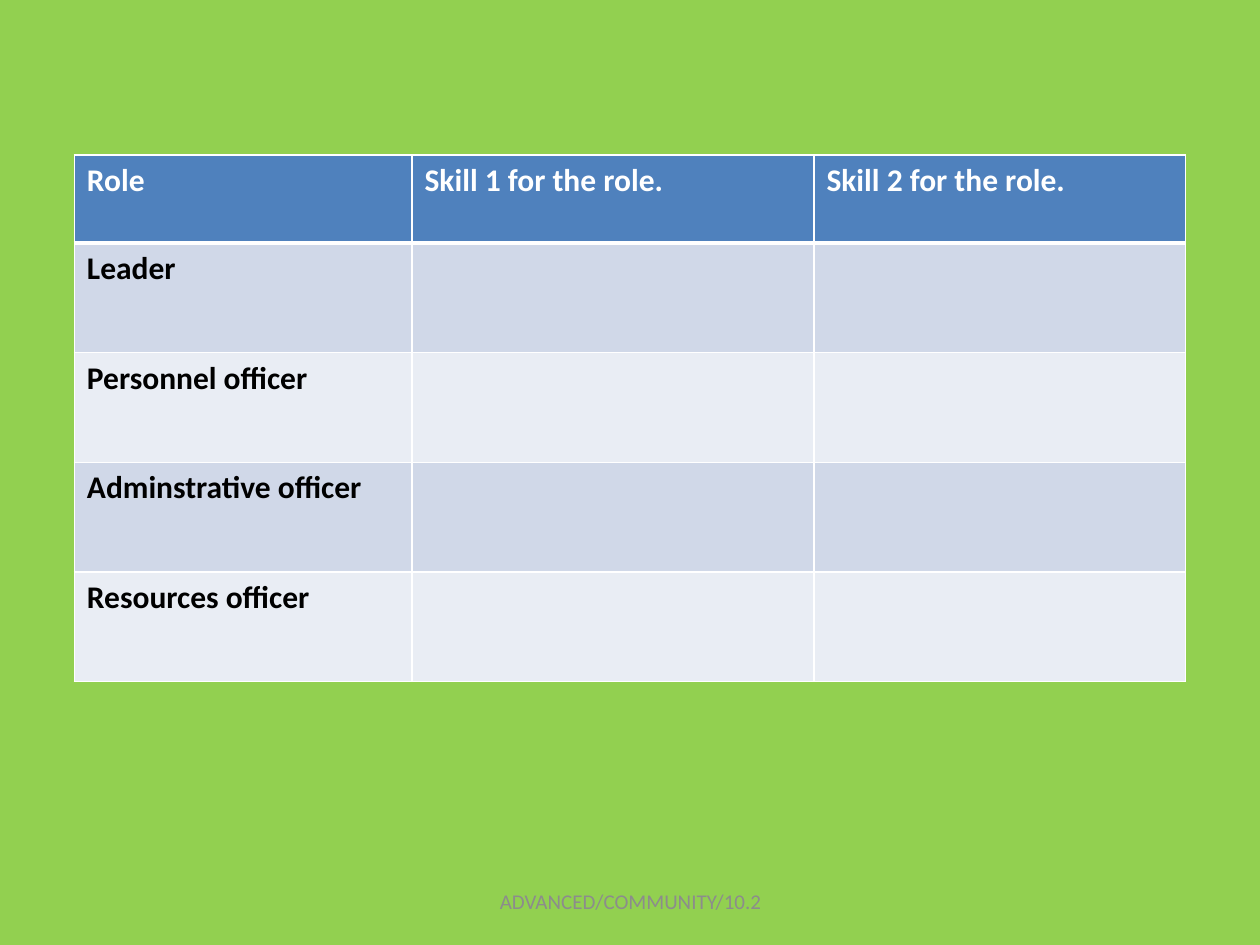
from lxml import etree
from pptx import Presentation
from pptx.dml.color import RGBColor
from pptx.enum.text import MSO_ANCHOR, PP_ALIGN
from pptx.oxml.ns import qn
from pptx.util import Inches, Pt

MIDDLE = MSO_ANCHOR.MIDDLE
CENTER = PP_ALIGN.CENTER

HEADINGS = ["Role", "Skill 1 for the role.", "Skill 2 for the role."]
ROLES = ["Leader", "Personnel officer", "Adminstrative officer", "Resources officer"]
FOOTER = "ADVANCED/COMMUNITY/10.2"

FONT = "Calibri"
COLORS = {
    "background": "92D050",
    "header": "4F81BD",
    "odd_row": "D0D8E8",
    "even_row": "E9EDF4",
    "white": "FFFFFF",
    "black": "000000",
    "footer": "8C8C8C",
}
COLUMN_WIDTHS = [2.68, 3.19, 2.95]
HEADER_HEIGHT = 0.7
ROW_HEIGHT = 0.87
TABLE_LEFT, TABLE_TOP = 0.59, 1.23


def color(name):
    return RGBColor.from_string(COLORS[name])


def format_text(para, size, color_name, bold=False):
    for span in para.runs:
        span.font.name = FONT
        span.font.size = Pt(size)
        span.font.bold = bold
        span.font.color.rgb = color(color_name)


def set_borders(cell, widths):
    """Draw white cell borders; widths maps L, R, T, B to points."""
    properties = cell._tc.get_or_add_tcPr()
    for index, (side, width) in enumerate(widths.items()):
        line = etree.Element(qn(f"a:ln{side}"), w=str(Pt(width)))
        fill = etree.SubElement(line, qn("a:solidFill"))
        etree.SubElement(fill, qn("a:srgbClr"), val=COLORS["white"])
        properties.insert(index, line)


def add_roles_table(page):
    rows = [HEADINGS] + [[role, "", ""] for role in ROLES]
    heights = [HEADER_HEIGHT] + [ROW_HEIGHT] * len(ROLES)
    table = page.shapes.add_table(
        len(rows), len(HEADINGS), Inches(TABLE_LEFT), Inches(TABLE_TOP),
        Inches(sum(COLUMN_WIDTHS)), Inches(sum(heights))).table
    for column, width in zip(table.columns, COLUMN_WIDTHS):
        column.width = Inches(width)
    for row, height in zip(table.rows, heights):
        row.height = Inches(height)

    for r, texts in enumerate(rows):
        is_header = r == 0
        fill_name = "header" if is_header else "odd_row" if r % 2 else "even_row"
        borders = {"L": 1, "R": 1, "T": 3 if r == 1 else 1, "B": 3 if is_header else 1}
        for c, text in enumerate(texts):
            cell = table.cell(r, c)
            cell.fill.solid()
            cell.fill.fore_color.rgb = color(fill_name)
            set_borders(cell, borders)
            if text:
                cell.text_frame.text = text
                format_text(cell.text_frame.paragraphs[0], 18,
                            "white" if is_header else "black", bold=True)


def add_footer(page):
    box = page.shapes.add_textbox(Inches(3.42), Inches(6.95), Inches(3.17), Inches(0.4))
    frame = box.text_frame
    frame.word_wrap = True
    frame.vertical_anchor = MIDDLE
    frame.text = FOOTER
    para = frame.paragraphs[0]
    para.alignment = CENTER
    format_text(para, 12, "footer")


def main():
    deck = Presentation()
    deck.slide_width, deck.slide_height = Inches(10), Inches(7.5)
    page = deck.slides.add_slide(deck.slide_layouts[6])
    page.background.fill.solid()
    page.background.fill.fore_color.rgb = color("background")
    add_roles_table(page)
    add_footer(page)
    deck.save("out.pptx")


if __name__ == "__main__":
    main()
